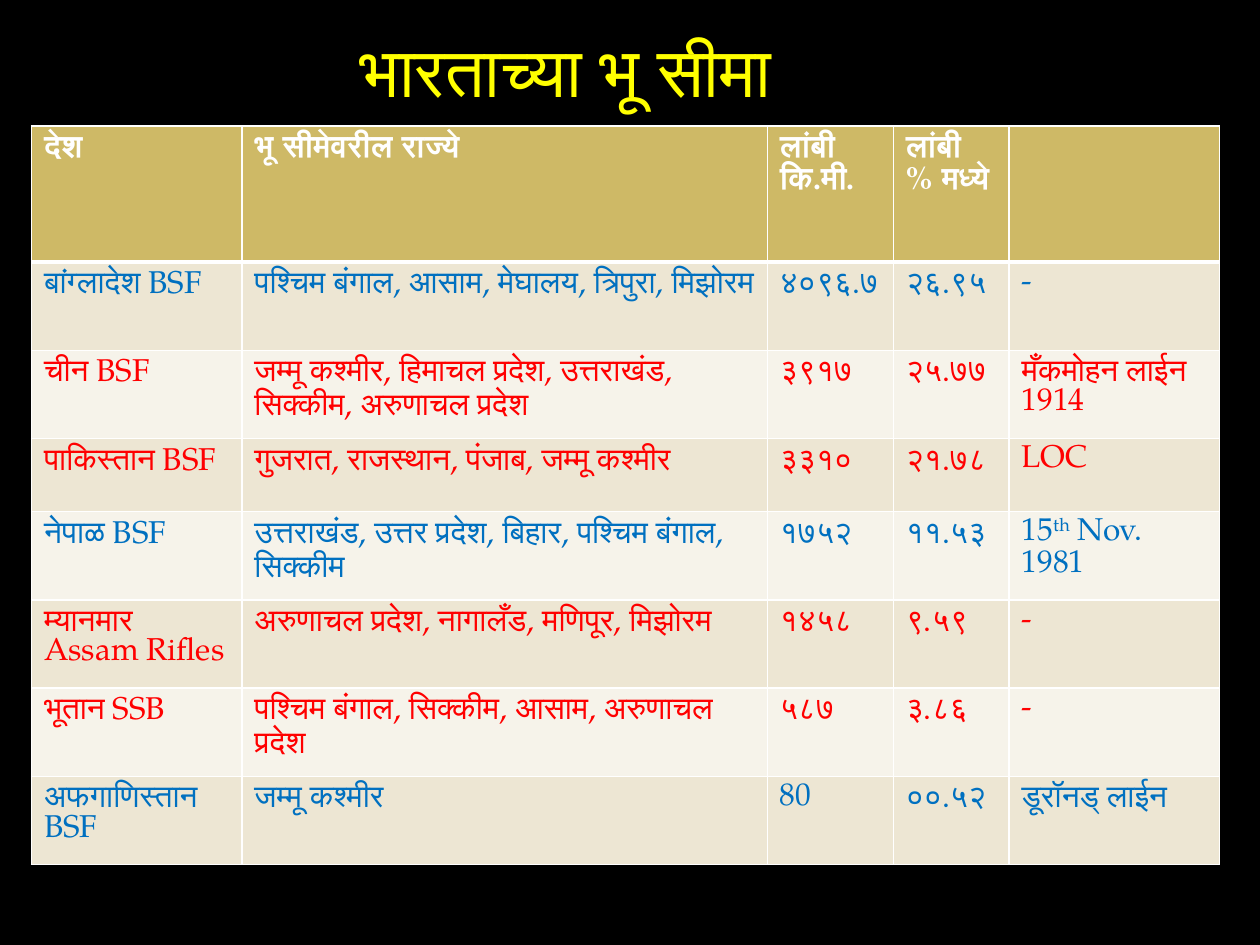
"""Build a slide with a table of India's land borders."""
import pptx
import pptx.dml.color
import pptx.enum.text
import pptx.oxml
import pptx.oxml.ns
import pptx.util
from pptx.util import Inches

FONT = "TeX Gyre Pagella"
WHITE, BLUE, RED = "FFFFFF", "0070C0", "FF0000"
GOLD, SAND, CREAM = "CEB966", "EDE6D3", "F6F3EA"
WIDTHS = [1.67, 4.17, 1, 0.92, 1.67]
HEIGHTS = [1.08, 0.7] + [0.58] * 6
ROWS = [
    (WHITE, ["देश", "भू सीमेवरील राज्ये", "लांबी कि.मी.", "लांबी % मध्ये", ""]),
    (BLUE, ["बांग्लादेश BSF", "पश्चिम बंगाल, आसाम, मेघालय, त्रिपुरा, मिझोरम",
            "४०९६.७", "२६.९५", "-"]),
    (RED, ["चीन BSF", "जम्मू कश्मीर, हिमाचल प्रदेश, उत्तराखंड, सिक्कीम, अरुणाचल प्रदेश",
           "३९१७", "२५.७७", "मँकमोहन लाईन 1914"]),
    (RED, ["पाकिस्तान BSF", "गुजरात, राजस्थान, पंजाब, जम्मू कश्मीर",
           "३३१०", "२१.७८", "LOC"]),
    (BLUE, ["नेपाळ BSF", "उत्तराखंड, उत्तर प्रदेश, बिहार, पश्चिम बंगाल, सिक्कीम",
            "१७५२", "११.५३", "15^th^ Nov. 1981"]),
    (RED, ["म्यानमार Assam Rifles", "अरुणाचल प्रदेश, नागालँड, मणिपूर, मिझोरम",
           "१४५८", "९.५९", "-"]),
    (RED, ["भूतान SSB", "पश्चिम बंगाल, सिक्कीम, आसाम, अरुणाचल प्रदेश",
           "५८७", "३.८६", "-"]),
    (BLUE, ["अफगाणिस्तान BSF", "जम्मू कश्मीर", "80", "००.५२", "डूरॉनड् लाईन"]),
]


def paint(fill, tint):
    """Fill with a solid colour."""
    fill.solid()
    fill.fore_color.rgb = pptx.dml.color.RGBColor.from_string(tint)


def style(font, size, tint, bold=False):
    """Set the face, size, weight and colour of a font."""
    font.name = FONT
    font.size = pptx.util.Pt(size)
    font.bold = bold
    paint(font.fill, tint)


def add_title(slide, text):
    """Place the heading in the title placeholder."""
    title = slide.shapes.title
    title.left, title.top = Inches(2.75), Inches(0.17)
    title.width, title.height = Inches(4.45), Inches(0.77)
    frame = title.text_frame
    frame.text = text
    frame.word_wrap = False
    frame.auto_size = pptx.enum.text.MSO_AUTO_SIZE.SHAPE_TO_FIT_TEXT
    frame.vertical_anchor = pptx.enum.text.MSO_ANCHOR.TOP
    para = frame.paragraphs[0]
    para.alignment = pptx.enum.text.PP_ALIGN.LEFT
    style(para.runs[0].font, 40, "FFFF00")


def add_border(cell, side, points):
    """Draw one white edge of a cell."""
    space = pptx.oxml.ns.nsdecls("a")
    line = pptx.oxml.parse_xml(
        f'<a:ln{side} {space} w="{points * 12700}"><a:solidFill>'
        f'<a:srgbClr val="{WHITE}"/></a:solidFill></a:ln{side}>')
    cell._tc.get_or_add_tcPr().append(line)


def fill_cell(cell, text, tint, row):
    """Write and format a cell; carets enclose superscript."""
    for side in "LRTB":
        thick = (row, side) in [(0, "B"), (1, "T")]
        add_border(cell, side, 3 if thick else 1)
    paint(cell.fill, GOLD if row == 0 else SAND if row % 2 else CREAM)
    para = cell.text_frame.paragraphs[0]
    style(para.font, 18, tint, row == 0)
    for part, piece in enumerate(text.split("^") if text else []):
        run = para.add_run()
        run.text = piece
        style(run.font, 18, tint, row == 0)
        if part % 2:
            run._r.get_or_add_rPr().set("baseline", "30000")


def add_grid(slide):
    """Add the table of borders."""
    table = slide.shapes.add_table(
        len(ROWS), len(WIDTHS), Inches(0.25), Inches(1),
        Inches(sum(WIDTHS)), Inches(sum(HEIGHTS))).table
    for col, width in zip(table.columns, WIDTHS):
        col.width = Inches(width)
    for row, (tint, texts) in enumerate(ROWS):
        table.rows[row].height = Inches(HEIGHTS[row])
        for col, text in enumerate(texts):
            fill_cell(table.cell(row, col), text, tint, row)


def main():
    """Build and save the slide."""
    deck = pptx.Presentation()
    deck.slide_width, deck.slide_height = Inches(10), Inches(7.5)
    slide = deck.slides.add_slide(deck.slide_layouts[5])
    paint(slide.background.fill, "000000")
    add_title(slide, "भारताच्या भू सीमा")
    add_grid(slide)
    deck.save("out.pptx")


if __name__ == "__main__":
    main()
